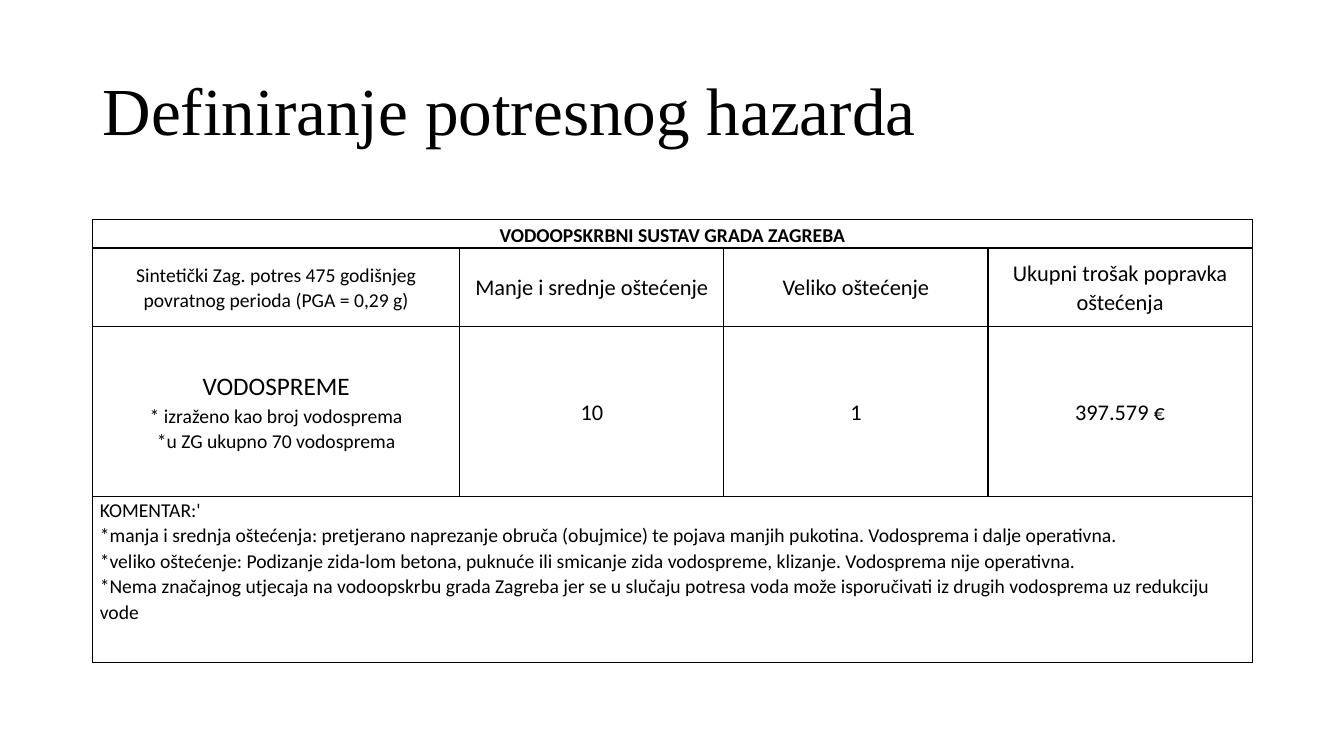
import copy

import lxml.etree
import pptx
import pptx.dml.color
import pptx.enum.text
import pptx.oxml.ns
import pptx.util

Inches = pptx.util.Inches
Pt = pptx.util.Pt
ALIGN = pptx.enum.text.PP_ALIGN
ANCHOR = pptx.enum.text.MSO_ANCHOR
qn = pptx.oxml.ns.qn

COLORS = {"ink": "000000"}
COLS = [3.64, 2.62, 2.62, 2.62]
ROWS = [0.28, 0.78, 1.69, 1.64]

BANNER = "VODOOPSKRBNI SUSTAV GRADA ZAGREBA"
HEADS = [
    "Sintetički Zag. potres 475 godišnjeg povratnog perioda (PGA = 0,29 g)",
    "Manje i srednje oštećenje",
    "Veliko oštećenje",
    "Ukupni trošak popravka oštećenja",
]
TANKS = "VODOSPREME\n* izraženo kao broj vodosprema\n*u ZG ukupno 70 vodosprema"
VALUES = ["10", "1", "397.579 €"]
NOTE = "\n".join([
    "KOMENTAR:'",
    "*manja i srednja oštećenja: pretjerano naprezanje obruča (obujmice) te pojava "
    "manjih pukotina. Vodosprema i dalje operativna.",
    "*veliko oštećenje: Podizanje zida-lom betona, puknuće ili smicanje zida "
    "vodospreme, klizanje. Vodosprema nije operativna.",
    "*Nema značajnog utjecaja na vodoopskrbu grada Zagreba jer se u slučaju potresa "
    "voda može isporučivati iz drugih vodosprema uz redukciju vode",
])


def write(frame, text, size=14, first=None, font="Calibri", bold=False,
          align=ALIGN.CENTER, spacing=1.07, after=8):
    """Fill one paragraph, breaking at newlines; first is the size of line one."""
    para = frame.paragraphs[0]
    para.alignment = align
    para.line_spacing = spacing
    para.space_after = Pt(after)
    for index, line in enumerate(text.split("\n")):
        if index:
            para.add_line_break()
            # The break takes the format of the line it ends.
            para._p[-1].append(copy.deepcopy(run.font._element))
        run = para.add_run()
        run.text = line
        run.font.size = Pt(first if first and not index else size)
        run.font.name = font
        run.font.bold = bold
        run.font.color.rgb = pptx.dml.color.RGBColor.from_string(COLORS["ink"])


def border(cell, width=1):
    props = cell._tc.get_or_add_tcPr()
    for side in ("a:lnL", "a:lnR", "a:lnT", "a:lnB"):
        line = lxml.etree.SubElement(props, qn(side), w=str(Pt(width)))
        fill = lxml.etree.SubElement(line, qn("a:solidFill"))
        lxml.etree.SubElement(fill, qn("a:srgbClr"), val=COLORS["ink"])


def add_title(slide, text):
    box = slide.shapes.add_textbox(Inches(0.92), Inches(0.4), Inches(11.5), Inches(1.45))
    frame = box.text_frame
    frame.word_wrap = True
    frame.vertical_anchor = ANCHOR.MIDDLE
    write(frame, text, size=48, font="Times New Roman", align=ALIGN.LEFT,
          spacing=0.9, after=0)


def add_grid(slide):
    """Add the bordered table without text, its first and last rows merged."""
    shape = slide.shapes.add_table(len(ROWS), len(COLS), Inches(0.92), Inches(2.18),
                                   Inches(sum(COLS)), Inches(sum(ROWS)))
    table = shape.table
    table.first_row = False
    table.horz_banding = False
    for column, width in zip(table.columns, COLS):
        column.width = Inches(width)
    for row, height in zip(table.rows, ROWS):
        row.height = Inches(height)
    for cell in table.iter_cells():
        cell.margin_left = cell.margin_right = Inches(0.07)
        cell.margin_top = cell.margin_bottom = 0
        cell.vertical_anchor = ANCHOR.MIDDLE
        border(cell)
        cell.fill.background()
    last = len(COLS) - 1
    for row in (0, len(ROWS) - 1):
        table.cell(row, 0).merge(table.cell(row, last))
    return table


def fill_grid(table):
    top, note = table.cell(0, 0), table.cell(3, 0)
    top.vertical_anchor = ANCHOR.BOTTOM
    write(top.text_frame, BANNER, bold=True)
    for col, text in enumerate(HEADS):
        write(table.cell(1, col).text_frame, text, size=16 if col else 14)
    write(table.cell(2, 0).text_frame, TANKS, first=18)
    for col, text in enumerate(VALUES, 1):
        write(table.cell(2, col).text_frame, text, size=16)
    note.vertical_anchor = ANCHOR.TOP
    write(note.text_frame, NOTE, align=ALIGN.LEFT)


def main():
    deck = pptx.Presentation()
    deck.slide_width = Inches(13.33)
    deck.slide_height = Inches(7.5)
    slide = deck.slides.add_slide(deck.slide_layouts[6])
    add_title(slide, "Definiranje potresnog hazarda")
    fill_grid(add_grid(slide))
    deck.save("out.pptx")


if __name__ == "__main__":
    main()
